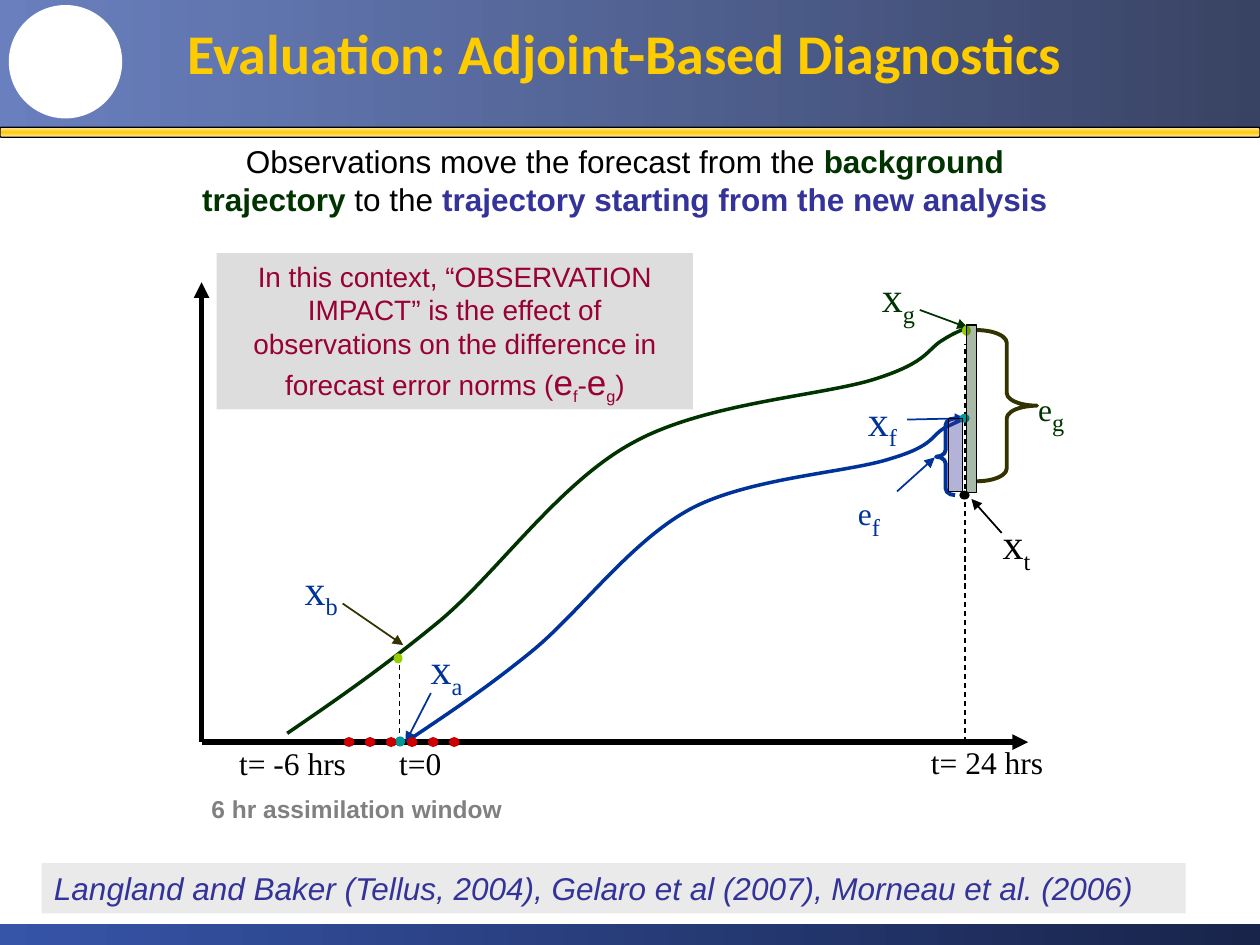
import pptx
import pptx.dml.color
import pptx.enum.dml
import pptx.enum.shapes
import pptx.enum.text
import pptx.oxml.ns
import pptx.util
from lxml import etree

PX = 9144  # EMU in one px, with 100 px to the inch
SHAPE = pptx.enum.shapes.MSO_SHAPE
DASH = pptx.enum.dml.MSO_LINE
ALIGN = pptx.enum.text.PP_ALIGN
qn = pptx.oxml.ns.qn

BLACK, GREEN, BLUE, OLIVE = "000000", "003300", "003399", "333300"
VIOLET, LIME, TEAL, RED, MAROON = "333399", "99CC00", "009999", "CC0000", "990033"


def color(value):
    return pptx.dml.color.RGBColor.from_string(value)


def emu(box, x, y):
    """Slide position of a point given relative to the box."""
    return (box[0] + x) * PX, (box[1] + y) * PX


def set_alpha(parent, percent):
    for tone in parent.iter(qn("a:srgbClr")):
        etree.SubElement(tone, qn("a:alpha")).set("val", str(percent * 1000))


def set_line(shape, tone, width, dash=None, arrow=False):
    shape.line.color.rgb = color(tone)
    shape.line.width = pptx.util.Pt(width)
    if dash:
        shape.line.dash_style = dash
    if arrow:
        etree.SubElement(shape.line._get_or_add_ln(), qn("a:tailEnd")).set("type", "triangle")


def add_part(page, box, place, kind=SHAPE.RECTANGLE, fill=None, line=None, width=0.75, alpha=None):
    x, y, w, h = place
    shape = page.shapes.add_shape(kind, *emu(box, x, y), w * PX, h * PX)
    shape.shadow.inherit = False
    if fill:
        shape.fill.solid()
        shape.fill.fore_color.rgb = color(fill)
    else:
        shape.fill.background()
    if alpha:
        set_alpha(shape.fill._xPr.find(qn("a:solidFill")), alpha)
    if line:
        set_line(shape, line, width)
    else:
        shape.line.fill.background()
    return shape


def set_gradient(shape, stops, angle=0):
    """Stops are (position, colour, opacity), in percent."""
    shape.fill.gradient()
    shape.fill.gradient_angle = angle
    stop_list = shape.fill._xPr.find(qn("a:gradFill")).find(qn("a:gsLst"))
    for old in list(stop_list):
        stop_list.remove(old)
    for position, tone, opacity in stops:
        stop = etree.SubElement(stop_list, qn("a:gs"))
        stop.set("pos", str(position * 1000))
        etree.SubElement(stop, qn("a:srgbClr")).set("val", tone)
        set_alpha(stop, opacity)


def add_line(page, box, start, end, tone, width, dash=None, arrow=False):
    line = page.shapes.add_connector(
        pptx.enum.shapes.MSO_CONNECTOR.STRAIGHT, *emu(box, *start), *emu(box, *end))
    set_line(line, tone, width, dash, arrow)
    etree.SubElement(line._element.spPr, qn("a:effectLst"))
    return line


def add_curve(page, box, points, tone):
    """Smooth open curve: a start point, then three Bezier points for each piece."""
    start, *rest = [(box[0] + x, box[1] + y) for x, y in points]
    builder = page.shapes.build_freeform(*start, scale=PX)
    builder.add_line_segments(rest, close=False)
    curve = builder.convert_to_shape()
    outline = next(curve._element.iter(qn("a:path")))
    pieces = outline.findall(qn("a:lnTo"))
    for first in range(0, len(pieces), 3):
        bezier = etree.SubElement(outline, qn("a:cubicBezTo"))
        for piece in pieces[first:first + 3]:
            bezier.append(piece[0])
            outline.remove(piece)
    curve.shadow.inherit = False
    curve.fill.background()
    set_line(curve, tone, 2)


def write(shape, spans, align=ALIGN.LEFT, anchor=pptx.enum.text.MSO_ANCHOR.TOP, **base):
    """Spans are (text, changes to the base format)."""
    frame = shape.text_frame
    frame.word_wrap = True
    frame.auto_size = pptx.enum.text.MSO_AUTO_SIZE.NONE
    frame.vertical_anchor = anchor
    para = frame.paragraphs[0]
    para.alignment = align
    for text, changes in spans:
        span = para.add_run()
        span.text = text
        for key, value in {**base, **changes}.items():
            if key == "color":
                span.font.color.rgb = color(value)
            elif key == "sub":
                span.font._element.set("baseline", "-25000")
            else:
                setattr(span.font, key, pptx.util.Pt(value) if key == "size" else value)


def add_text(page, box, place, spans, **form):
    x, y, w, h = place
    write(page.shapes.add_textbox(*emu(box, x, y), w * PX, h * PX), spans, **form)


def add_header(page, box):
    band = add_part(page, box, (0, 0, box[2], 108))
    set_gradient(band, [(0, "3654A8", 74), (100, "18244A", 86)])
    rule = add_part(page, box, (0, 101, box[2], 8), SHAPE.ROUNDED_RECTANGLE, line=BLACK)
    set_gradient(rule, [(0, "FFE5B6", 100), (50, "FFCC00", 100), (100, "FFE5B6", 100)], 90)
    badge = add_part(page, box, (7, 4, 90, 90), SHAPE.OVAL, "FFFFFF")
    title = page.shapes.title
    title.left, title.top = emu(box, 75, 8)
    title.width, title.height = 842 * PX, 67 * PX
    write(title, [("Evaluation: Adjoint-Based Diagnostics", {})], ALIGN.CENTER,
          pptx.enum.text.MSO_ANCHOR.MIDDLE, name="Calibri", size=32, bold=True, color="FFCC00")
    badge._element.addnext(title._element)


def add_footer(page, box):
    set_gradient(add_part(page, box, (0, 0, box[2], box[3])),
                 [(0, "3654A8", 100), (100, "18244A", 100)])


def add_trajectories(page, box):
    """Background and analysis forecasts from -6 to 24 hours, with their errors."""
    add_curve(page, box, [
        (68, 382), (106, 356), (144, 330), (190, 292), (236, 253), (285, 182), (343, 151),
        (401, 119), (496, 114), (537, 100), (577, 87), (576, 77), (588, 70),
        (599, 63), (604, 62), (608, 60)], GREEN)
    add_curve(page, box, [
        (162, 389), (193, 368), (224, 348), (262, 317), (300, 286), (340, 230), (388, 204),
        (435, 179), (514, 175), (547, 164), (581, 154), (579, 146), (589, 140),
        (599, 135), (602, 134), (606, 132)], BLUE)

    for end in ((656, 389), (0, 24)):
        add_line(page, box, (0, 389), end, BLACK, 3, arrow=True)
    for x, top in ((157, 318), (606, 73)):
        add_line(page, box, (x, 389), (x, top), BLACK, 0.75, DASH.DASH)
    for start, end, tone in (
            ((570, 46), (608, 60), GREEN), ((112, 279), (160, 312), OLIVE),
            ((635, 223), (611, 196), BLACK), ((560, 133), (606, 132), BLUE),
            ((182, 350), (162, 389), BLUE), ((552, 190), (582, 163), BLUE)):
        add_line(page, box, start, end, tone, 1, arrow=True)

    for x, y, w, h, tone in ((604, 59, 6, 7, LIME), (153, 319, 6, 7, LIME),
                             (602, 129, 7, 6, TEAL), (602, 190, 7, 6, BLACK),
                             (154, 385, 7, 7, TEAL)):
        add_part(page, box, (x, y, w, h), SHAPE.OVAL, tone, tone)
    window = add_line(page, box, (117, 389), (203, 389), RED, 6, DASH.ROUND_DOT)
    window.line._get_or_add_ln().set("cap", "rnd")

    for kind, place, tone, bend in (
            (SHAPE.RIGHT_BRACE, (615, 62, 48, 120), OLIVE, 0.21),
            (SHAPE.LEFT_BRACE, (583, 132, 15, 61), BLUE, 0.35)):
        brace = add_part(page, box, place, kind, line=tone, width=2.25)
        brace.adjustments[0] = bend
    add_part(page, box, (607, 58, 8, 133), fill=GREEN, line=BLACK, alpha=34)
    add_part(page, box, (593, 132, 11, 58), fill=VIOLET, line=BLACK, alpha=37)

    for letter, index, x, y, w, h, tone in (
            ("x", "b", 72, 242, 65, 30, BLUE), ("x", "g", 530, 10, 65, 51, GREEN),
            ("e", "g", 654, 96, 55, 50, GREEN), ("x", "t", 626, 206, 62, 45, BLACK),
            ("x", "f", 519, 108, 55, 47, BLUE), ("x", "a", 172, 305, 58, 48, BLUE),
            ("e", "f", 511, 179, 58, 36, BLUE)):
        add_text(page, box, (x, y, w, h),
                 [(letter, {"size": 24 if letter == "x" else 18}), (index, {"sub": True})],
                 name="Times New Roman", size=24, color=tone)
    for label, x, y, w in (("t= -6 hrs", 20, 386, 137), ("t=0", 147, 386, 84),
                           ("t= 24 hrs", 569, 385, 111)):
        add_text(page, box, (x, y, w, 34), [(label, {})],
                 name="Times New Roman", size=18, color=BLACK)
    add_text(page, box, (-2, 425, 314, 33), [("6 hr assimilation window", {})],
             name="Arial", size=14, bold=True, color="808080")


def add_summary(page, box):
    add_text(page, box, (0, 0, box[2], box[3]), [
        ("Observations move the forecast from the ", {}),
        ("background trajectory", {"color": GREEN, "bold": True}),
        (" to the ", {}),
        ("trajectory starting from the new analysis", {"color": VIOLET, "bold": True}),
    ], align=ALIGN.CENTER, name="Arial", size=18, color=BLACK)


def add_impact_note(page, box):
    note = add_part(page, box, (0, 0, box[2], box[3]), fill="DDDDDD")
    large, sub = {"size": 20}, {"sub": True}
    write(note, [
        ("In this context, “OBSERVATION IMPACT” is the effect of observations "
         "on the difference in forecast error norms (", {}),
        ("e", large), ("f", sub), ("-", {}), ("e", large), ("g", sub), (")", {}),
    ], ALIGN.CENTER, name="Arial", size=16, color=MAROON)


def add_references(page, box):
    panel = add_part(page, box, (0, 0, box[2], box[3]), fill="EAEAEA")
    write(panel, [("Langland and Baker (Tellus, 2004), Gelaro et al (2007), "
                   "Morneau et al. (2006)", {})],
          name="Arial", size=18, italic=True, color=VIOLET)


def main():
    deck = pptx.Presentation()
    deck.slide_width, deck.slide_height = 1000 * PX, 750 * PX
    page = deck.slides.add_slide(deck.slide_layouts[5])
    add_header(page, (0, 0, 1000, 109))
    add_footer(page, (0, 733, 1000, 17))
    add_trajectories(page, (160, 200, 710, 458))
    add_references(page, (33, 685, 908, 40))
    add_summary(page, (125, 108, 742, 70))
    add_impact_note(page, (172, 201, 378, 124))
    deck.save("out.pptx")


if __name__ == "__main__":
    main()
